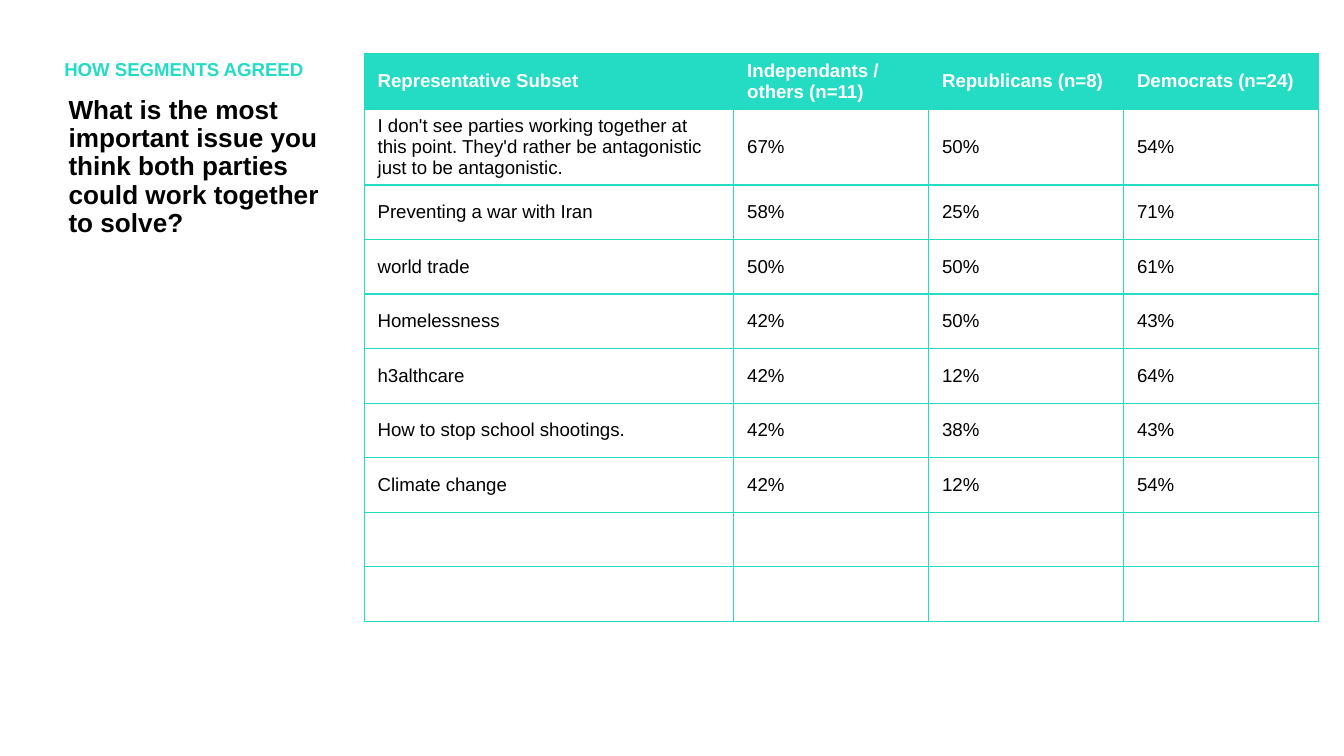
from dataclasses import dataclass

from lxml.etree import SubElement
from pptx import Presentation
from pptx.dml.color import RGBColor
from pptx.enum.text import MSO_ANCHOR, MSO_AUTO_SIZE, PP_ALIGN
from pptx.oxml.ns import qn
from pptx.util import Inches, Pt

TEAL = RGBColor(0x24, 0xDB, 0xC3)
WHITE = RGBColor(0xFF, 0xFF, 0xFF)
BLACK = RGBColor(0x00, 0x00, 0x00)
FONT = "Arial"
BORDER = Pt(0.75)

# Widescreen page, 16:9
PAGE_WIDTH = Inches(10)
PAGE_HEIGHT = PAGE_WIDTH * 9 // 16

# Table grid, in inches
TABLE_LEFT, TABLE_TOP = 2.71, 0.4
COLUMN_WIDTHS = (2.75, 1.45, 1.45, 1.45)
ROW_HEIGHT = 4.06 / 10
EMPTY_ROWS = 2


@dataclass(frozen=True)
class Caption:
    text: str
    left: float
    top: float
    width: float
    height: float
    size: int
    color: RGBColor


@dataclass(frozen=True)
class Issue:
    name: str
    independents: str
    republicans: str
    democrats: str

    def texts(self) -> tuple[str, ...]:
        return self.name, self.independents, self.republicans, self.democrats


QUESTION = Caption("What is the most important issue you think both parties "
                   "could work together to solve?",
                   0.41, 0.67, 2.3, 4.41, 14, BLACK)
KICKER = Caption("HOW SEGMENTS AGREED", 0.38, 0.4, 2.32, 0.28, 10, TEAL)
HEADER = ("Representative Subset", "Independants / others (n=11)",
          "Republicans (n=8)", "Democrats (n=24)")
ISSUES = (
    Issue("I don't see parties working together at this point. "
          "They'd rather be antagonistic just to be antagonistic.",
          "67%", "50%", "54%"),
    Issue("Preventing a war with Iran", "58%", "25%", "71%"),
    Issue("world trade", "50%", "50%", "61%"),
    Issue("Homelessness", "42%", "50%", "43%"),
    Issue("h3althcare", "42%", "12%", "64%"),
    Issue("How to stop school shootings.", "42%", "38%", "43%"),
    Issue("Climate change", "42%", "12%", "54%"),
)


def format_runs(para, size: int, color: RGBColor, bold: bool) -> None:
    for span in para.runs:
        span.font.name = FONT
        span.font.size = Pt(size)
        span.font.bold = bold
        span.font.color.rgb = color


def fill_caption(box, caption: Caption) -> None:
    box.left, box.top = Inches(caption.left), Inches(caption.top)
    box.width, box.height = Inches(caption.width), Inches(caption.height)
    frame = box.text_frame
    frame.text = caption.text
    frame.word_wrap = True
    frame.auto_size = MSO_AUTO_SIZE.NONE
    frame.vertical_anchor = MSO_ANCHOR.TOP
    para = frame.paragraphs[0]
    para.alignment = PP_ALIGN.LEFT
    para.line_spacing = 0.9
    para.space_before = Pt(10)
    format_runs(para, caption.size, caption.color, True)


def add_borders(cell) -> None:
    properties = cell._tc.get_or_add_tcPr()
    for position, side in enumerate(("a:lnL", "a:lnR", "a:lnT", "a:lnB")):
        line = SubElement(properties, qn(side), w=str(int(BORDER)))
        fill = SubElement(line, qn("a:solidFill"))
        SubElement(fill, qn("a:srgbClr"), val=str(TEAL))
        properties.insert(position, line)  # borders come before the fill


def fill_cell(cell, text: str, is_header: bool) -> None:
    cell.fill.solid()
    cell.fill.fore_color.rgb = TEAL if is_header else WHITE
    cell.vertical_anchor = MSO_ANCHOR.MIDDLE
    add_borders(cell)
    if text:
        cell.text_frame.text = text
        format_runs(cell.text_frame.paragraphs[0], 10,
                    WHITE if is_header else BLACK, is_header)


def add_issue_table(page) -> None:
    blank = ("",) * len(HEADER)
    rows = [HEADER, *(issue.texts() for issue in ISSUES), *[blank] * EMPTY_ROWS]
    table = page.shapes.add_table(
        len(rows), len(HEADER), Inches(TABLE_LEFT), Inches(TABLE_TOP),
        Inches(sum(COLUMN_WIDTHS)), Inches(ROW_HEIGHT * len(rows))).table
    table.horz_banding = False
    for column, width in zip(table.columns, COLUMN_WIDTHS):
        column.width = Inches(width)
    for r, texts in enumerate(rows):
        table.rows[r].height = Inches(ROW_HEIGHT)
        for c, text in enumerate(texts):
            fill_cell(table.cell(r, c), text, r == 0)


def main() -> None:
    deck = Presentation()
    deck.slide_width, deck.slide_height = PAGE_WIDTH, PAGE_HEIGHT
    page = deck.slides.add_slide(deck.slide_layouts[5])

    # Question and the line above it
    fill_caption(page.shapes.title, QUESTION)
    fill_caption(page.shapes.add_textbox(0, 0, 0, 0), KICKER)

    # Agreement by segment
    add_issue_table(page)
    deck.save("out.pptx")


if __name__ == "__main__":
    main()
